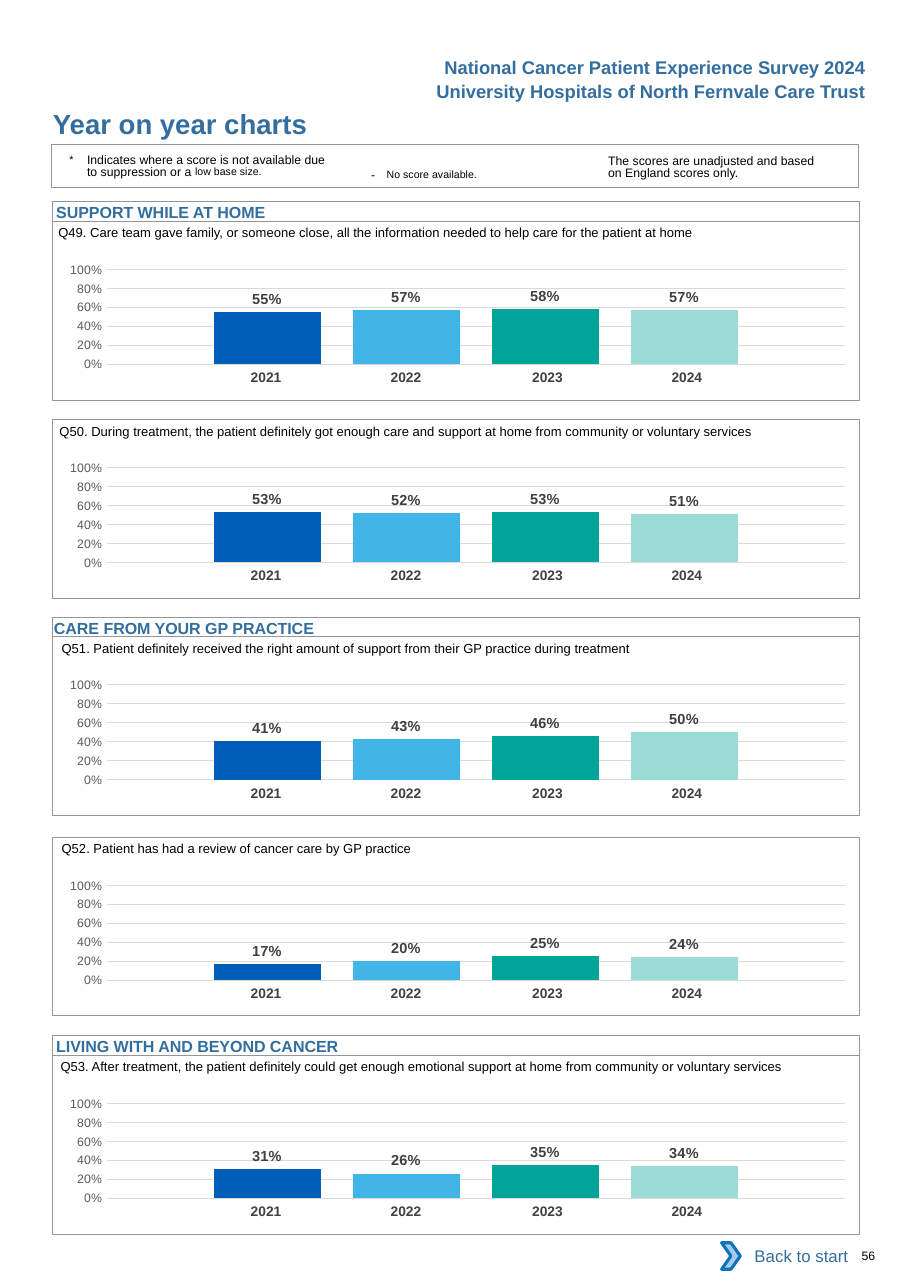
from dataclasses import dataclass
from typing import NamedTuple

import pptx
import pptx.chart.data
import pptx.dml.color
import pptx.enum.chart
import pptx.enum.shapes
import pptx.enum.text
import pptx.oxml
import pptx.oxml.ns
import pptx.util

PX = 9144  # 100 px to the inch
COLORS = {
    "heading": "336E9F", "text": "000000", "frame": "939598", "year": "414042",
    "axis": "595959", "label": "404040", "grid": "D9D9D9", "white": "FFFFFF",
    "chevron": "A8C7E9", "chevron edge": "0A74BB",
    "2021": "005EB8", "2022": "41B6E6", "2023": "00A499", "2024": "9CDCD7",
}
YEARS = ["2021", "2022", "2023", "2024"]
YEAR_WIDTHS = [127, 127, 134, 127]
YEAR_RIGHT_MARGINS = [0, 0, 4, 12]
NO_TABLE_STYLE = "{2D5ABB26-0587-4C30-8999-92F81FD0307C}"
FRAME_LEFT, FRAME_WIDTH, FRAME_HEIGHT = 48, 732, 162
HEADING_HEIGHT = 18
Align = pptx.enum.text.PP_ALIGN
Anchor = pptx.enum.text.MSO_ANCHOR
Preset = pptx.enum.shapes.MSO_SHAPE


@dataclass
class Panel:
    top: int
    question: str
    question_left: int
    scores: list[float]
    heading: str = ""
    heading_indent: int = 3


class NoteRun(NamedTuple):
    text: str
    size: int = 8
    raised: int = 0


@dataclass
class Note:
    left: int
    top: int
    width: int
    runs: list[NoteRun]
    hang: int = 0
    line_points: float | None = 8.1


PANELS = [
    Panel(201, "Q49. Care team gave family, or someone close, all the information needed "
          "to help care for the patient at home", 53, [0.55, 0.57, 0.58, 0.57],
          "SUPPORT WHILE AT HOME"),
    Panel(381, "Q50. During treatment, the patient definitely got enough care and support "
          "at home from community or voluntary services", 54, [0.53, 0.52, 0.53, 0.51]),
    Panel(578, "Q51. Patient definitely received the right amount of support from their "
          "GP practice during treatment", 56, [0.41, 0.43, 0.46, 0.50],
          "CARE FROM YOUR GP PRACTICE", 1),
    Panel(760, "Q52. Patient has had a review of cancer care by GP practice", 56,
          [0.17, 0.20, 0.25, 0.24]),
    Panel(958, "Q53. After treatment, the patient definitely could get enough emotional "
          "support at home from community or voluntary services", 55,
          [0.31, 0.26, 0.35, 0.34], "LIVING WITH AND BEYOND CANCER"),
]
NOTES = [
    Note(63, 141, 239, [
        NoteRun("*\t", 12, 3),
        NoteRun("Indicates where a score is not available due to suppression or a "),
        NoteRun("low base size.", 12, 7)], 16),
    Note(337, 146, 163, [NoteRun("-\t"), NoteRun("No score available.", 12, 3)], 14, None),
    Note(552, 141, 195, [
        NoteRun("The scores are unadjusted and based on England scores only.")]),
]


def rgb(name: str) -> pptx.dml.color.RGBColor:
    return pptx.dml.color.RGBColor.from_string(COLORS[name])


def box(left: int, top: int, width: int, height: int) -> list[pptx.util.Emu]:
    return [pptx.util.Emu(px * PX) for px in (left, top, width, height)]


def set_font(font, size: float, color: str, bold: bool = False) -> None:
    font.name = "Arial"
    font.size = pptx.util.Pt(size)
    font.bold = bold
    font.color.rgb = rgb(color)


def clear_margins(frame) -> None:
    frame.margin_left = frame.margin_top = frame.margin_right = frame.margin_bottom = 0
    frame.word_wrap = True


def write(shape, text: str, size: float, color: str, bold: bool = False,
          align=Align.LEFT, anchor=Anchor.TOP, indent: int = 0) -> None:
    frame = shape.text_frame
    clear_margins(frame)
    frame.margin_left = pptx.util.Emu(indent * PX)
    frame.vertical_anchor = anchor
    paragraph = frame.paragraphs[0]
    paragraph.text = text
    paragraph.alignment = align
    set_font(paragraph.font, size, color, bold)


def add_outline(slide, left: int, top: int, width: int, height: int, points: float = 0.5):
    outline = slide.shapes.add_shape(Preset.RECTANGLE, *box(left, top, width, height))
    outline.shadow.inherit = False
    outline.fill.background()
    outline.line.color.rgb = rgb("frame")
    outline.line.width = pptx.util.Pt(points)
    return outline


def add_note(slide, note: Note) -> None:
    frame = slide.shapes.add_textbox(*box(note.left, note.top, note.width, 27)).text_frame
    clear_margins(frame)
    paragraph = frame.paragraphs[0]
    if note.line_points:
        paragraph.line_spacing = pptx.util.Pt(note.line_points)
    if note.hang:
        properties = paragraph._p.get_or_add_pPr()
        properties.set("marL", str(note.hang * PX))
        properties.set("indent", str(-note.hang * PX))
    for part in note.runs:
        run = paragraph.add_run()
        run.text = part.text
        set_font(run.font, part.size, "text")
        if part.raised:
            run._r.get_or_add_rPr().set("baseline", str(part.raised * 1000))


def place_plot_area(chart) -> None:
    """Fix the inner plot area as fractions of the chart."""
    places = zip("xywh", (0.079, 0.145, 0.915, 0.666))
    layout = pptx.oxml.parse_xml(
        f'<c:layout {pptx.oxml.ns.nsdecls("c")}><c:manualLayout>'
        '<c:layoutTarget val="inner"/><c:xMode val="edge"/><c:yMode val="edge"/>'
        + "".join(f'<c:{side} val="{share}"/>' for side, share in places)
        + "</c:manualLayout></c:layout>")
    plot_area = chart._chartSpace.chart.plotArea
    for old in plot_area.findall(pptx.oxml.ns.qn("c:layout")):
        plot_area.remove(old)
    plot_area.insert(0, layout)


def add_score_chart(slide, top: int, scores: list[float]) -> None:
    data = pptx.chart.data.CategoryChartData(number_format="0%")
    data.categories = ["1"]
    for number, score in enumerate(scores, 1):
        data.add_series(f"Series {number}", [score])
    chart = slide.shapes.add_chart(
        pptx.enum.chart.XL_CHART_TYPE.COLUMN_CLUSTERED, *box(39, top, 732, 129), data).chart
    chart.has_legend = chart.has_title = False
    chart.font.name = "Calibri"
    chart.font.size = pptx.util.Pt(10)
    chart.font.color.rgb = rgb("text")
    chart.category_axis.visible = False

    axis = chart.value_axis
    axis.minimum_scale, axis.maximum_scale, axis.major_unit = 0, 1, 0.2
    axis.major_tick_mark = axis.minor_tick_mark = pptx.enum.chart.XL_TICK_MARK.NONE
    axis.format.line.fill.background()
    axis.major_gridlines.format.line.color.rgb = rgb("grid")
    axis.major_gridlines.format.line.width = pptx.util.Pt(0.75)
    axis.tick_labels.number_format = "0%"
    axis.tick_labels.number_format_is_linked = False
    set_font(axis.tick_labels.font, 8, "axis")

    plot = chart.plots[0]
    plot.gap_width, plot.overlap, plot.vary_by_categories = 200, -30, False
    for year, series in zip(YEARS, plot.series):
        series.format.fill.solid()
        series.format.fill.fore_color.rgb = rgb(year)
        labels = series.data_labels
        labels.show_value = True
        labels.position = pptx.enum.chart.XL_LABEL_POSITION.OUTSIDE_END
        labels.number_format = "0%"
        labels.number_format_is_linked = False
        set_font(labels.font, 9.5, "label", True)
    place_plot_area(chart)


def add_year_row(slide, top: int) -> None:
    table = slide.shapes.add_table(1, len(YEARS), *box(173, top, sum(YEAR_WIDTHS), 27)).table
    table.first_row = table.horz_banding = False
    table._tbl.tblPr.find(pptx.oxml.ns.qn("a:tableStyleId")).text = NO_TABLE_STYLE
    for index, year in enumerate(YEARS):
        table.columns[index].width = pptx.util.Emu(YEAR_WIDTHS[index] * PX)
        cell = table.cell(0, index)
        cell.fill.background()
        cell.margin_right = pptx.util.Emu(YEAR_RIGHT_MARGINS[index] * PX)
        paragraph = cell.text_frame.paragraphs[0]
        paragraph.text = year
        paragraph.alignment = Align.CENTER
        set_font(paragraph.font, 9, "year", True)


def add_panel(slide, panel: Panel) -> None:
    if panel.heading:
        heading = add_outline(slide, FRAME_LEFT, panel.top - HEADING_HEIGHT,
                              FRAME_WIDTH, HEADING_HEIGHT)
        write(heading, panel.heading, 10.5, "heading", True, indent=panel.heading_indent)
        heading.text_frame.margin_top = pptx.util.Emu(PX)
    question = slide.shapes.add_textbox(*box(panel.question_left, panel.top + 3, 724, 15))
    write(question, panel.question, 8.5, "text")
    add_score_chart(slide, panel.top + 25, panel.scores)
    add_year_row(slide, panel.top + 130)
    add_outline(slide, FRAME_LEFT, panel.top, FRAME_WIDTH, FRAME_HEIGHT)


def add_back_to_start(slide) -> None:
    caption = slide.shapes.add_textbox(*box(662, 1119, 108, 42))
    write(caption, "Back to start", 11, "heading", align=Align.RIGHT, anchor=Anchor.MIDDLE)
    chevron = slide.shapes.add_shape(Preset.CHEVRON, *box(655, 1128, 17, 24))
    chevron.shadow.inherit = False
    chevron.fill.solid()
    chevron.fill.fore_color.rgb = rgb("chevron")
    chevron.line.color.rgb = rgb("chevron edge")
    chevron.line.width = pptx.util.Pt(2)


def main() -> None:
    deck = pptx.Presentation()
    deck.slide_width, deck.slide_height = box(0, 0, 826, 1169)[2:]
    slide = deck.slides.add_slide(deck.slide_layouts[5])

    title = slide.shapes.title
    title.left, title.top, title.width, title.height = box(48, 97, 450, 30)
    write(title, "Year on year charts", 18, "heading", True)
    for top, text in ((51, "National Cancer Patient Experience Survey 2024"),
                      (73, "University Hospitals of North Fernvale Care Trust")):
        write(slide.shapes.add_textbox(*box(286, top, 500, 20)), text, 12, "heading", True,
              Align.RIGHT)

    add_outline(slide, 47, 131, FRAME_WIDTH, 39, 0.75)
    for note in NOTES:
        add_note(slide, note)
    for panel in PANELS:
        add_panel(slide, panel)
    add_back_to_start(slide)
    write(slide.shapes.add_textbox(*box(782, 1133, 41, 13)), "56", 8, "text")
    deck.save("out.pptx")


if __name__ == "__main__":
    main()
